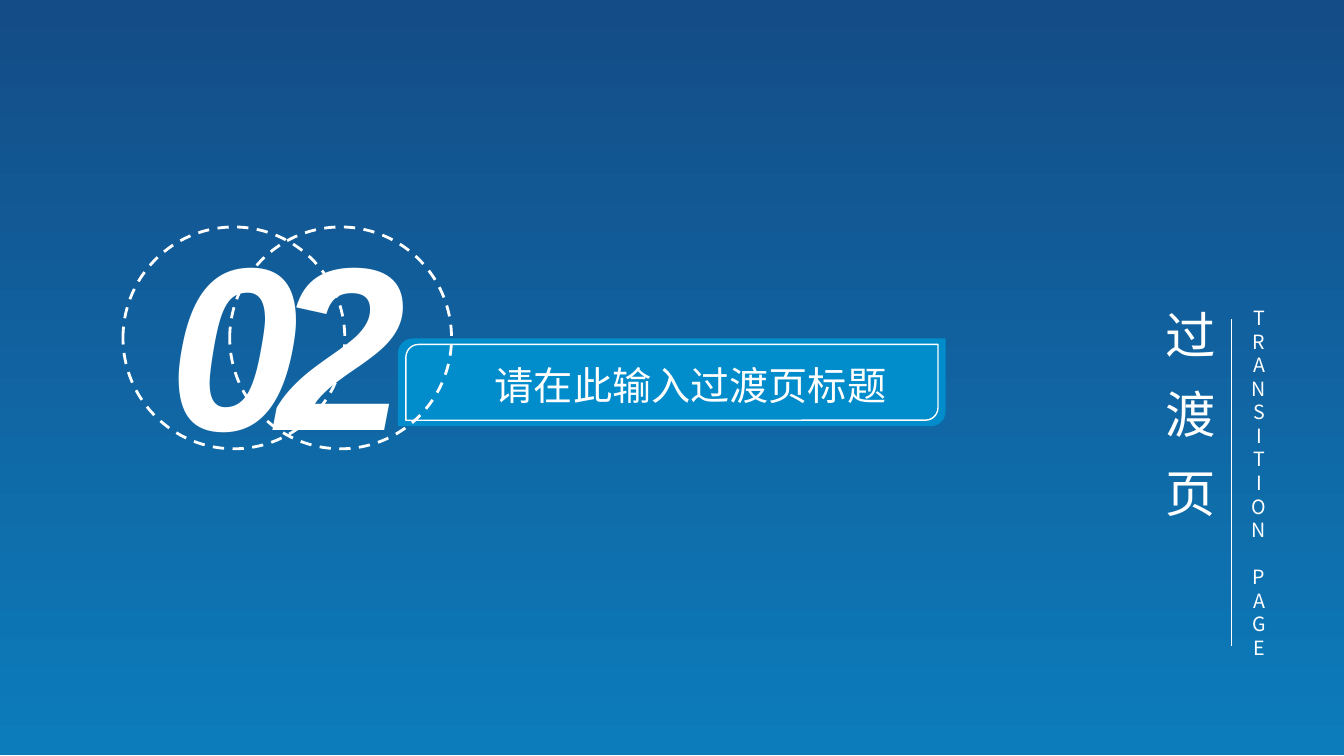
from lxml import etree
from pptx import Presentation
from pptx.dml.color import RGBColor
from pptx.enum.dml import MSO_LINE
from pptx.enum.shapes import MSO_CONNECTOR, MSO_SHAPE
from pptx.enum.text import MSO_ANCHOR, PP_ALIGN
from pptx.oxml.ns import qn
from pptx.util import Cm, Pt

RECTANGLE = MSO_SHAPE.RECTANGLE
BANNER = MSO_SHAPE.ROUND_2_DIAG_RECTANGLE
OVAL = MSO_SHAPE.OVAL
STRAIGHT = MSO_CONNECTOR.STRAIGHT
DASH = MSO_LINE.DASH
MIDDLE = MSO_ANCHOR.MIDDLE
LEFT, CENTER = PP_ALIGN.LEFT, PP_ALIGN.CENTER

COLORS = {"white": "FFFFFF", "top": "144C87", "bottom": "0C7CBB", "banner": "018CCC"}
LATIN, CHINESE = "Arial", "Noto Sans CJK SC"
LINE_PITCH = Pt(16.8)


class TransitionSlide:
    def __init__(self, presentation):
        self.slide = presentation.slides.add_slide(presentation.slide_layouts[6])

    def color(self, name):
        return RGBColor.from_string(COLORS[name])

    def shape(self, kind, left, top, width, height, fill=None, line=None, dash=None):
        shape = self.slide.shapes.add_shape(kind, Cm(left), Cm(top), Cm(width), Cm(height))
        shape.shadow.inherit = False
        if fill:
            shape.fill.solid()
            shape.fill.fore_color.rgb = self.color(fill)
        else:
            shape.fill.background()
        if line:
            shape.line.color.rgb = self.color("white")
            shape.line.width = Pt(line)
            shape.line.dash_style = dash
        else:
            shape.line.fill.background()
        return shape

    def gradient(self, width, height):
        fill = self.shape(RECTANGLE, 0, 0, width, height).fill
        fill.gradient()
        fill.gradient_angle = 270
        for stop, name, position in zip(fill.gradient_stops, ("top", "bottom"), (0, 1)):
            stop.color.rgb = self.color(name)
            stop.position = position

    def style(self, paragraph, size, font, align=LEFT, spacing=0, bold=None):
        paragraph.alignment = align
        paragraph.font.size = Pt(size)
        paragraph.font.name = font
        paragraph.font.bold = paragraph.font.italic = bold
        paragraph.font.color.rgb = self.color("white")
        for run in paragraph.runs:
            properties = run.font._element
            etree.SubElement(properties, qn("a:ea")).set("typeface", CHINESE)
            if spacing:
                properties.set("spc", str(spacing * 100))

    def digit(self, text, left):
        """Draw a large digit over a dashed circle."""
        circle = self.shape(OVAL, left, 5.72, 5.59, 5.59, line=2, dash=DASH)
        frame = circle.text_frame
        frame.vertical_anchor = MIDDLE
        frame.word_wrap = True
        frame.text = text
        self.style(frame.paragraphs[0], 166, LATIN, CENTER, bold=True)

    def text(self, text, left, top, width, height, size, font, wrap=True, vertical=False, **style):
        box = self.slide.shapes.add_textbox(Cm(left), Cm(top), Cm(width), Cm(height))
        frame = box.text_frame
        frame.word_wrap = wrap
        frame.text = text
        if vertical:
            frame._txBody.bodyPr.set("vert", "eaVert")
        for paragraph in frame.paragraphs:
            self.style(paragraph, size, font, **style)
        return frame

    def stacked_words(self, words, left, top, width, height):
        """Set one letter per line, with an empty line's height between words."""
        letters = "\n".join("".join(words))
        frame = self.text(letters, left, top, width, height, 14, CHINESE,
                          wrap=False, align=CENTER, spacing=6)
        for paragraph in frame.paragraphs:
            paragraph.line_spacing = LINE_PITCH
        start = 0
        for word in words[:-1]:
            start += len(word)
            frame.paragraphs[start].space_before = LINE_PITCH

    def rule(self, x, top, bottom):
        line = self.slide.shapes.add_connector(STRAIGHT, Cm(x), Cm(top), Cm(x), Cm(bottom))
        line.line.color.rgb = self.color("white")
        line.line.width = Pt(0.75)
        etree.SubElement(line._element.spPr, qn("a:effectLst"))


def main():
    presentation = Presentation()
    presentation.slide_width = Cm(33.87)
    presentation.slide_height = Cm(19.05)
    page = TransitionSlide(presentation)
    page.gradient(33.87, 19.03)
    page.shape(BANNER, 10.03, 8.53, 13.8, 2.21, fill="banner")
    page.shape(BANNER, 10.23, 8.68, 13.41, 1.91, line=1)
    page.text("请在此输入过渡页标题", 12.22, 8.99, 10.92, 1.45, 28, LATIN)
    page.digit("2", 5.79)
    page.text("过 渡 页", 28.8, 7.57, 2.06, 10.16, 36, CHINESE, vertical=True, spacing=6)
    page.stacked_words(["TRANSITION", "PAGE"], 31.17, 7.59, 1.12, 9.25)
    page.rule(31.04, 8.05, 16.28)
    page.digit("0", 3.1)
    presentation.save("out.pptx")


if __name__ == "__main__":
    main()
